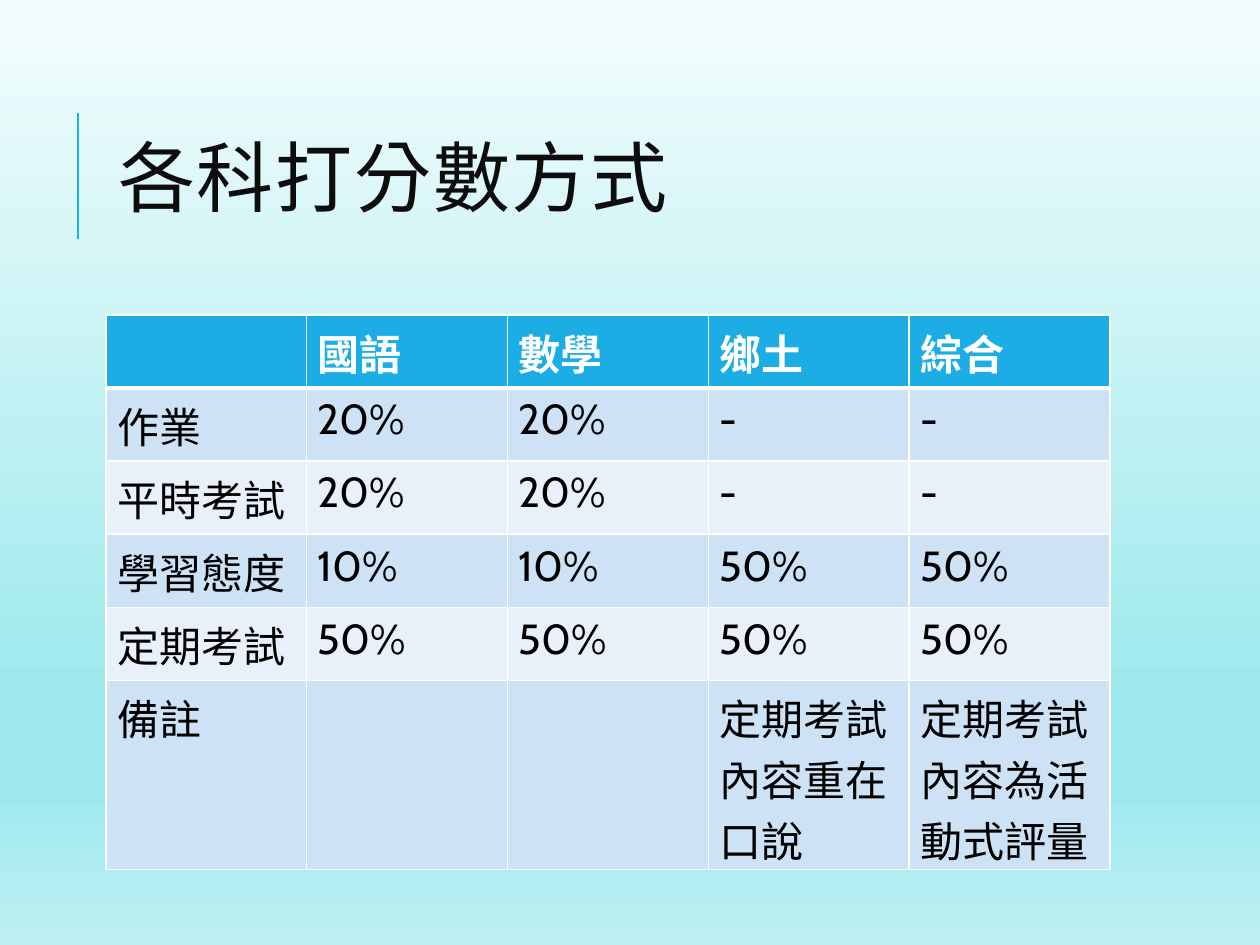
import pptx
import pptx.dml.color
import pptx.enum.shapes
import pptx.enum.text
import pptx.oxml.ns
import pptx.util
from lxml import etree
from pptx.util import Inches

qn = pptx.oxml.ns.qn
rgb = pptx.dml.color.RGBColor.from_string


class Theme:
    backdrop = [(0, "F4FDFD"), (74, "9DE9ED"), (83, "9DE9ED"), (100, "BEF0F3")]
    accent = "1CADE4"
    bands = ["CDE3F5", "E8F1FA"]
    white = "FFFFFF"
    title_text = "0D0D0D"
    body_text = "000000"
    title_font, body_font = "Calibri", "Cabin"
    title_size, body_size = 44, 24
    border, header_border = 1, 3


def style(r, font, size, color, bold=False):
    r.font.name = font
    r.font.size = pptx.util.Pt(size)
    r.font.color.rgb = rgb(color)
    r.font.bold = bold
    r._r.get_or_add_rPr().set("lang", "zh-TW")


def add_border(cell, side, width):
    ln = etree.SubElement(cell._tc.get_or_add_tcPr(), qn("a:ln" + side),
                          w=str(pptx.util.Pt(width)))
    fill = etree.SubElement(ln, qn("a:solidFill"))
    etree.SubElement(fill, qn("a:srgbClr"), val=Theme.white)


prs = pptx.Presentation()
prs.slide_width, prs.slide_height = Inches(10), Inches(7.5)
s = prs.slides.add_slide(prs.slide_layouts[6])

# Background gradient, top to bottom
s.background.fill.gradient()
s.background.fill.gradient_angle = 270
stops = s.element.find(".//" + qn("a:gsLst"))
for stop in list(stops):
    stops.remove(stop)
for percent, color in Theme.backdrop:
    stop = etree.SubElement(stops, qn("a:gs"), pos=str(percent * 1000))
    etree.SubElement(stop, qn("a:srgbClr"), val=color)

# Title with its accent line
line = s.shapes.add_connector(pptx.enum.shapes.MSO_CONNECTOR.STRAIGHT,
                              Inches(0.62), Inches(1.9), Inches(0.62), Inches(0.9))
line.line.color.rgb = rgb(Theme.accent)
line.line.width = pptx.util.Pt(1.5)
etree.SubElement(line._element.spPr, qn("a:effectLst"))

title = s.shapes.add_textbox(Inches(0.84), Inches(0.64), Inches(7.97), Inches(1.64))
tf = title.text_frame
tf.word_wrap = True
tf.vertical_anchor = pptx.enum.text.MSO_ANCHOR.MIDDLE
tf.text = "各科打分數方式"
p = tf.paragraphs[0]
p.line_spacing = 0.8
r = p.runs[0]
style(r, Theme.title_font, Theme.title_size, Theme.title_text)
r._r.get_or_add_rPr().set("spc", "100")

# Grading table
grades = [
    ["", "國語", "數學", "鄉土", "綜合"],
    ["作業", "20%", "20%", "-", "-"],
    ["平時考試", "20%", "20%", "-", "-"],
    ["學習態度", "10%", "10%", "50%", "50%"],
    ["定期考試", "50%", "50%", "50%", "50%"],
    ["備註", "", "", "定期考試內容重在口說", "定期考試內容為活動式評量"],
]
row_heights = [0.58] * 5 + [1.5]
table = s.shapes.add_table(len(grades), len(grades[0]), Inches(0.84), Inches(2.5),
                           Inches(7.97), Inches(sum(row_heights))).table
for i, (row, height) in enumerate(zip(grades, row_heights)):
    table.rows[i].height = Inches(height)
    header = i == 0
    top = Theme.header_border if i == 1 else Theme.border
    bottom = Theme.header_border if header else Theme.border
    for j, text in enumerate(row):
        cell = table.cell(i, j)
        cell.margin_left = cell.margin_right = Inches(0.09)
        cell.margin_top = cell.margin_bottom = Inches(0.05)
        for side, width in zip("LRTB", [Theme.border, Theme.border, top, bottom]):
            add_border(cell, side, width)
        cell.fill.solid()
        cell.fill.fore_color.rgb = rgb(Theme.accent if header else Theme.bands[(i - 1) % 2])
        if text:
            cell.text_frame.text = text
            style(cell.text_frame.paragraphs[0].runs[0], Theme.body_font, Theme.body_size,
                  Theme.white if header else Theme.body_text, header)

prs.save("out.pptx")
